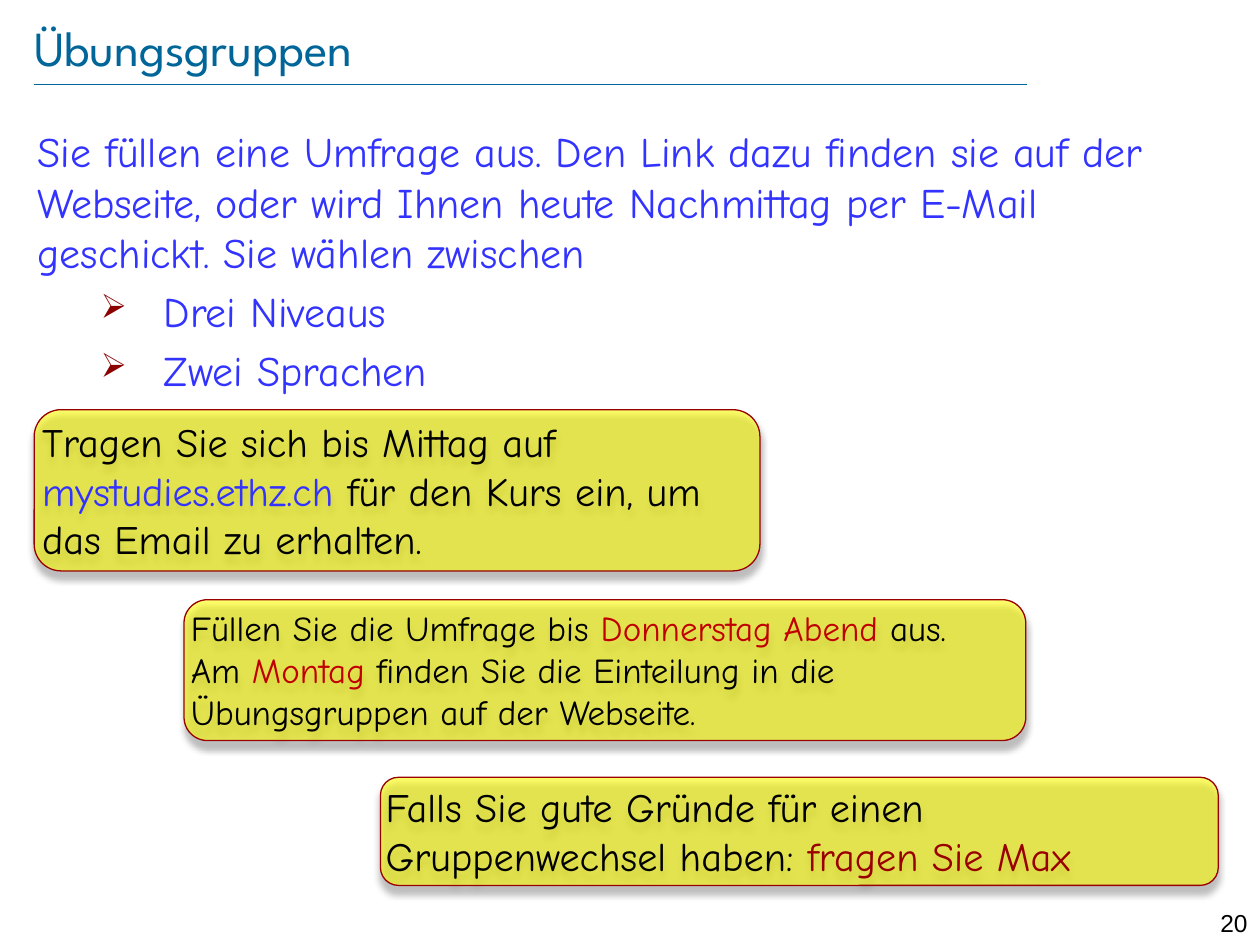
from lxml.etree import SubElement
from pptx import Presentation
from pptx.dml.color import RGBColor
from pptx.enum.shapes import MSO_CONNECTOR, MSO_SHAPE
from pptx.enum.text import MSO_ANCHOR as ANCHOR, PP_ALIGN as ALIGN
from pptx.oxml.ns import qn
from pptx.util import Cm, Pt

TEAL, BLUE, BLACK = "006699", "3333FF", "000000"
RED, DARK_RED, YELLOW, BULLET_RED = "C00000", "990000", "FFFF00", "8B0000"


def rgb(color):
    return RGBColor.from_string(color)


def add_run(p, text, *, size, font="Comic Neue", color=BLACK):
    r = p.add_run()
    r.text = text
    r.font.size = Pt(size)
    r.font.name = font
    r.font.color.rgb = rgb(color)


def add_bullet(p, char="➢", color=BULLET_RED, percent=80):
    """Give a paragraph a hanging indent and a coloured bullet."""
    pPr = p._p.get_or_add_pPr()
    pPr.set("marL", str(Cm(2.54)))
    pPr.set("indent", str(-Cm(1.27)))
    SubElement(SubElement(pPr, qn("a:buClr")), qn("a:srgbClr"), val=color)
    SubElement(pPr, qn("a:buSzPct"), val=str(percent * 1000))
    SubElement(pPr, qn("a:buChar"), char=char)


class SlideBuilder:
    def __init__(self, prs):
        self.s = prs.slides.add_slide(prs.slide_layouts[6])

    def text(self, left, top, width, height, text, *, align=ALIGN.LEFT,
             anchor=ANCHOR.TOP, margin=None, **style):
        tf = self.s.shapes.add_textbox(Cm(left), Cm(top), Cm(width), Cm(height)).text_frame
        tf.word_wrap = True
        tf.vertical_anchor = anchor
        if margin is not None:
            tf.margin_left = tf.margin_top = tf.margin_right = tf.margin_bottom = Cm(margin)
        p = tf.paragraphs[0]
        p.alignment = align
        add_run(p, text, **style)
        return tf

    def bullets(self, tf, items, **style):
        for item in items:
            p = tf.add_paragraph()
            add_bullet(p)
            p.space_before = Pt(4.8)
            add_run(p, item, **style)

    def rule(self, left, top, right):
        line = self.s.shapes.add_connector(
            MSO_CONNECTOR.STRAIGHT, Cm(left), Cm(top), Cm(right), Cm(top))
        line.line.color.rgb = rgb(TEAL)
        line.line.width = Pt(0.25)
        SubElement(line._element.spPr, qn("a:effectLst"))

    def note(self, left, top, width, height, runs, size):
        """Add a translucent rounded box with a soft shadow; runs are (text, color)."""
        sp = self.s.shapes.add_shape(
            MSO_SHAPE.ROUNDED_RECTANGLE, Cm(left), Cm(top), Cm(width), Cm(height))
        sp.fill.solid()
        sp.fill.fore_color.rgb = rgb(YELLOW)
        fill_color = sp._element.spPr.find(qn("a:solidFill"))[0]
        SubElement(fill_color, qn("a:alpha"), val="58000")
        sp.line.color.rgb = rgb(DARK_RED)
        sp.line.width = Pt(0.75)
        sp.shadow.inherit = False
        effects = sp._element.spPr.find(qn("a:effectLst"))
        shadow = SubElement(effects, qn("a:outerShdw"), blurRad=str(Pt(4)),
                            dist=str(Pt(4)), dir="5400000", rotWithShape="0")
        color = SubElement(shadow, qn("a:srgbClr"), val=BLACK)
        SubElement(color, qn("a:alpha"), val="43000")
        tf = sp.text_frame
        tf.word_wrap = True
        tf.vertical_anchor = ANCHOR.TOP
        tf.margin_left = tf.margin_top = tf.margin_bottom = 0
        tf.margin_right = Cm(0.25)
        p = tf.paragraphs[0]
        p.alignment = ALIGN.LEFT
        for text, text_color in runs:
            add_run(p, text, size=size, color=text_color)


def main():
    prs = Presentation()
    prs.slide_width, prs.slide_height = Cm(25.4), Cm(19.05)
    b = SlideBuilder(prs)

    b.rule(0.69, 1.7, 20.7)
    b.text(24, 18.19, 1.4, 0.61, "20", align=ALIGN.RIGHT, size=14, font="Arial")
    b.text(0.69, 0.33, 22.07, 1.22, "Übungsgruppen", anchor=ANCHOR.MIDDLE,
           margin=0, size=28, font="League Spartan", color=TEAL)

    body = b.text(
        0.51, 2.41, 22.86, 6.12,
        "Sie füllen eine Umfrage aus. Den Link dazu finden sie auf der Webseite, "
        "oder wird Ihnen heute Nachmittag per E-Mail geschickt. "
        "Sie wählen zwischen", size=24, color=BLUE)
    b.bullets(body, ["Drei Niveaus", "Zwei Sprachen"], size=24, color=BLUE)

    b.note(7.67, 15.67, 16.89, 2.18, [
        ("Falls Sie gute Gründe für einen Gruppenwechsel haben: ", BLACK),
        ("fragen Sie Max", DARK_RED)], size=23)
    b.note(0.69, 8.26, 14.63, 3.25, [
        ("Tragen Sie sich bis Mittag auf ", BLACK),
        ("mystudies.ethz.ch", BLUE),
        (" für den Kurs ein, um das Email zu erhalten.", BLACK)], size=23)
    b.note(3.71, 12.09, 16.97, 2.84, [
        ("Füllen Sie die Umfrage bis ", BLACK),
        ("Donnerstag Abend", RED),
        (" aus. Am ", BLACK),
        ("Montag", RED),
        (" finden Sie die Einteilung in die Übungsgruppen auf der Webseite.", BLACK)],
        size=20)

    prs.save("out.pptx")


if __name__ == "__main__":
    main()
